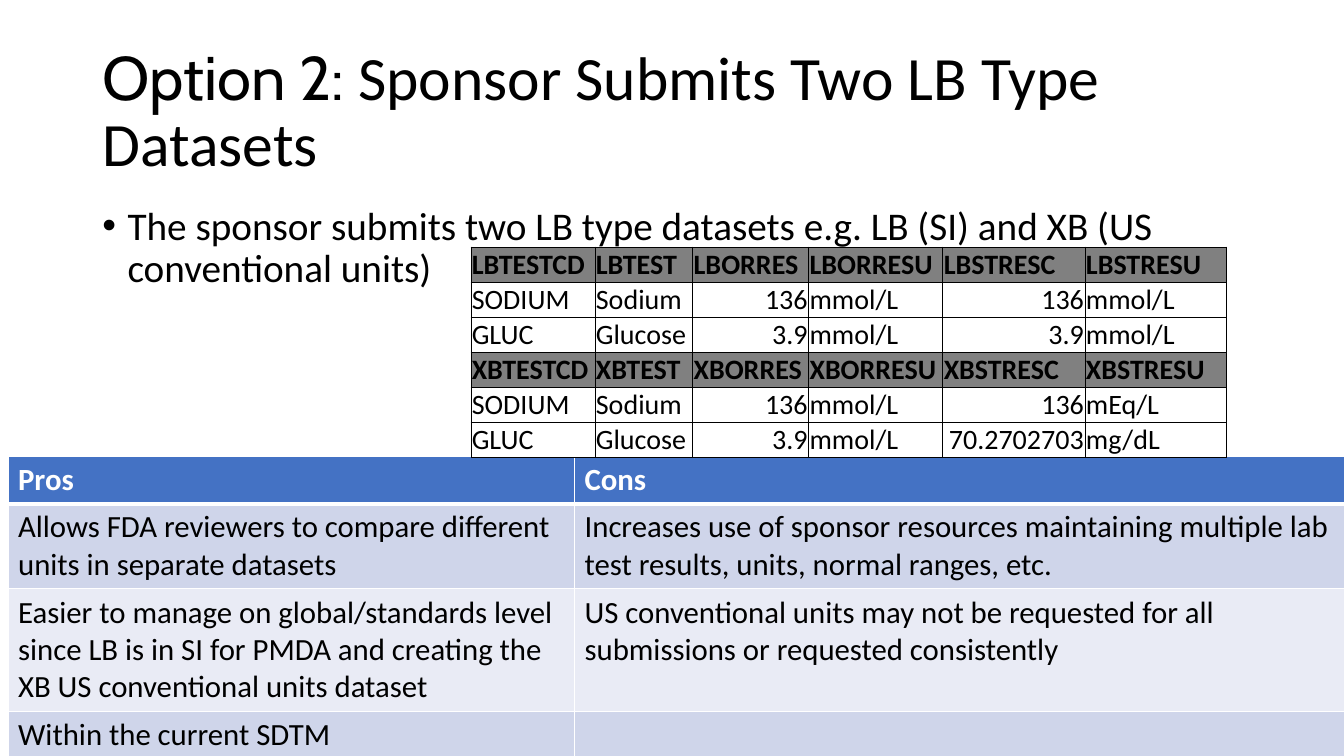
from lxml import etree
from pptx import Presentation
from pptx.dml.color import RGBColor
from pptx.enum.text import MSO_ANCHOR as Anchor, MSO_AUTO_SIZE as AutoSize, PP_ALIGN as Align
from pptx.oxml.ns import qn
from pptx.util import Inches, Pt

SLIDE_WIDTH, SLIDE_HEIGHT = Inches(13.33), Inches(7.5)
COLUMN, ROW = SLIDE_WIDTH / 100, SLIDE_HEIGHT / 100
FONT, TITLE_FONT = "Calibri", "Cabin"
COLORS = {
    "black": "000000",
    "white": "FFFFFF",
    "gray": "808080",
    "blue": "4472C4",
    "band_dark": "CFD5EA",
    "band_light": "E9EBF5",
}

LAB_COLUMNS = [9.23, 7.28, 8.63, 9.98, 10.58, 10.5]
LAB_ROWS = [4.64] * 6
LAB_VARIABLES = ["TESTCD", "TEST", "ORRES", "ORRESU", "STRESC", "STRESU"]
LAB_RESULTS = {
    "LB": [
        ["SODIUM", "Sodium", "136", "mmol/L", "136", "mmol/L"],
        ["GLUC", "Glucose", "3.9", "mmol/L", "3.9", "mmol/L"],
    ],
    "XB": [
        ["SODIUM", "Sodium", "136", "mmol/L", "136", "mEq/L"],
        ["GLUC", "Glucose", "3.9", "mmol/L", "70.2702703", "mg/dL"],
    ],
}
NUMERIC_COLUMNS = (2, 4)

PROS_CONS_COLUMNS = [42.15, 57.3]
PROS_CONS_ROWS = [6.1, 11.25, 16.25, 6.1]
PROS_CONS = [
    ["Pros", "Cons"],
    ["Allows FDA reviewers to compare different units in separate datasets",
     "Increases use of sponsor resources maintaining multiple lab test results, "
     "units, normal ranges, etc."],
    ["Easier to manage on global/standards level since LB is in SI for PMDA "
     "and creating the XB US conventional units dataset",
     "US conventional units may not be requested for all submissions "
     "or requested consistently"],
    ["Within the current SDTM", ""],
]


def grid_box(left, top, width, height):
    return int(left * COLUMN), int(top * ROW), int(width * COLUMN), int(height * ROW)


def format_run(run, size, color="black", bold=False, font=FONT):
    run.font.name = font
    run.font.size = Pt(size)
    run.font.bold = bold
    run.font.color.rgb = RGBColor.from_string(COLORS[color])


def fill_title(title):
    title.left, title.top, title.width, title.height = grid_box(6.88, 5.33, 86.25, 19.33)
    title.text_frame.auto_size = AutoSize.NONE
    title.text_frame.vertical_anchor = Anchor.MIDDLE
    paragraph = title.text_frame.paragraphs[0]
    paragraph.text = "Option 2:"
    paragraph.alignment = Align.LEFT
    paragraph.line_spacing = 0.9
    format_run(paragraph.runs[0], 44, font=TITLE_FONT)
    run = paragraph.add_run()
    run.text = " Sponsor Submits Two LB Type Datasets"
    format_run(run, 44)


def add_bullet_text(slide, box, text):
    text_frame = slide.shapes.add_textbox(*box).text_frame
    text_frame.word_wrap = True
    paragraph = text_frame.paragraphs[0]
    paragraph.text = text
    paragraph.line_spacing = 0.9
    paragraph.space_before = Pt(10)
    format_run(paragraph.runs[0], 28)
    properties = paragraph._p.get_or_add_pPr()
    properties.set("marL", str(Inches(0.25)))
    properties.set("indent", str(-Inches(0.25)))
    etree.SubElement(properties, qn("a:buFont"), typeface="Arial")
    etree.SubElement(properties, qn("a:buChar"), char="•")


def set_borders(cell, color, width, top=None, bottom=None):
    properties = cell._tc.get_or_add_tcPr()
    widths = {"L": width, "R": width, "T": top or width, "B": bottom or width}
    for side, points in widths.items():
        line = etree.SubElement(properties, qn(f"a:ln{side}"), w=str(Pt(points)))
        fill = etree.SubElement(line, qn("a:solidFill"))
        etree.SubElement(fill, qn("a:srgbClr"), val=COLORS[color])


def fill_cell(cell, text, size, color="black", bold=False, fill=None):
    if fill:
        cell.fill.solid()
        cell.fill.fore_color.rgb = RGBColor.from_string(COLORS[fill])
    else:
        cell.fill.background()
    cell.text_frame.text = text
    for run in cell.text_frame.paragraphs[0].runs:
        format_run(run, size, color, bold)


def add_plain_table(slide, left, top, columns, rows):
    box = grid_box(left, top, sum(columns), sum(rows))
    table = slide.shapes.add_table(len(rows), len(columns), *box).table
    table.first_row = table.horz_banding = False
    for column, width in zip(table.columns, columns):
        column.width = int(width * COLUMN)
    for row, height in zip(table.rows, rows):
        row.height = int(height * ROW)
    return table


def add_pros_cons(slide):
    table = add_plain_table(slide, 0.6, 60.4, PROS_CONS_COLUMNS, PROS_CONS_ROWS)
    for row, texts in enumerate(PROS_CONS):
        header = row == 0
        band = "band_dark" if row % 2 else "band_light"
        for column, text in enumerate(texts):
            cell = table.cell(row, column)
            set_borders(cell, "white", 1, top=3 if row == 1 else 1, bottom=3 if header else 1)
            fill_cell(cell, text, 22, "white" if header else "black", header,
                      "blue" if header else band)


def add_lab_results(slide):
    table = add_plain_table(slide, 35.03, 32.67, LAB_COLUMNS, LAB_ROWS)
    lines = []
    for domain, results in LAB_RESULTS.items():
        lines.append((True, [domain + variable for variable in LAB_VARIABLES]))
        lines.extend((False, result) for result in results)
    for row, (header, texts) in enumerate(lines):
        for column, text in enumerate(texts):
            cell = table.cell(row, column)
            set_borders(cell, "black", 0.5)
            fill_cell(cell, text, 20, bold=header, fill="gray" if header else None)
            cell.vertical_anchor = Anchor.BOTTOM
            cell.margin_left = cell.margin_right = cell.margin_top = Inches(0.01)
            cell.margin_bottom = 0
            if column in NUMERIC_COLUMNS and not header:
                cell.text_frame.paragraphs[0].alignment = Align.RIGHT


def main():
    presentation = Presentation()
    presentation.slide_width, presentation.slide_height = SLIDE_WIDTH, SLIDE_HEIGHT
    slide = presentation.slides.add_slide(presentation.slide_layouts.get_by_name("Title Only"))
    fill_title(slide.shapes.title)
    add_bullet_text(slide, grid_box(6.88, 26.67, 90.85, 63.47),
                    "The sponsor submits two LB type datasets e.g. LB (SI) and XB "
                    "(US conventional units)")
    add_pros_cons(slide)
    add_lab_results(slide)
    presentation.save("out.pptx")


if __name__ == "__main__":
    main()
